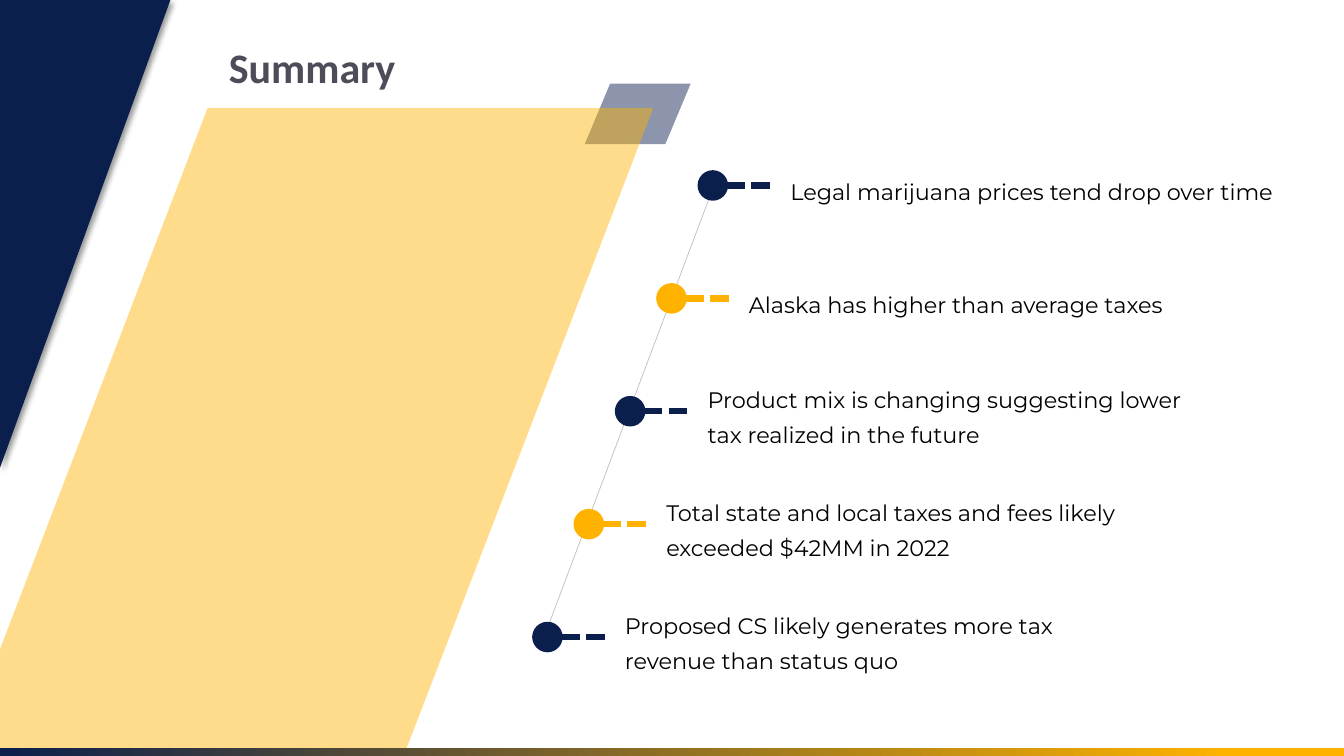
"""Build the Summary slide with five takeaways along a slanted timeline."""
from dataclasses import dataclass

from lxml.etree import SubElement
from pptx import Presentation
from pptx.dml.color import RGBColor
from pptx.enum.dml import MSO_LINE
from pptx.enum.shapes import MSO_CONNECTOR, MSO_SHAPE
from pptx.enum.text import MSO_ANCHOR, MSO_AUTO_SIZE, PP_ALIGN
from pptx.oxml.ns import qn
from pptx.util import Inches, Pt


@dataclass(frozen=True)
class Theme:
    navy: RGBColor = RGBColor(0x0B, 0x1F, 0x4D)
    amber: RGBColor = RGBColor(0xFF, 0xB3, 0x00)
    rail: RGBColor = RGBColor(0xBF, 0xBF, 0xBF)
    heading: RGBColor = RGBColor(0x4D, 0x4D, 0x5A)
    ink: RGBColor = RGBColor(0, 0, 0)
    heading_font: str = "Calibri"
    text_font: str = "Montserrat"
    heading_size: Pt = Pt(30)
    text_size: Pt = Pt(16)
    rail_width: Pt = Pt(0.5)
    marker_width: Pt = Pt(4.5)


def apply(target, settings):
    for name, value in settings.items():
        setattr(target, name, value)


class SlideBuilder:
    def __init__(self, slide, theme):
        self.slide = slide
        self.theme = theme

    def paint(self, shape, color, opacity=100):
        shape.shadow.inherit = False
        shape.fill.solid()
        shape.fill.fore_color.rgb = color
        shape.line.fill.background()
        if opacity < 100:
            tint = shape._element.spPr.find(qn("a:solidFill"))[0]
            SubElement(tint, qn("a:alpha"), val=str(opacity * 1000))

    def preset(self, kind, left, top, width, height, color, opacity=100):
        shape = self.slide.shapes.add_shape(
            kind, Inches(left), Inches(top), Inches(width), Inches(height))
        self.paint(shape, color, opacity)
        return shape

    def polygon(self, points, color, opacity=100):
        corners = [(Inches(x), Inches(y)) for x, y in points]
        builder = self.slide.shapes.build_freeform(*corners[0])
        builder.add_line_segments(corners[1:], close=True)
        shape = builder.convert_to_shape()
        self.paint(shape, color, opacity)
        return shape

    def cast_shadow(self, shape):
        effects = shape._element.spPr.find(qn("a:effectLst"))
        shadow = SubElement(effects, qn("a:outerShdw"), blurRad=str(Pt(4)),
                            dist=str(Pt(3)), dir="2700000", rotWithShape="0")
        black = SubElement(shadow, qn("a:srgbClr"), val="000000")
        SubElement(black, qn("a:alpha"), val="40000")

    def line(self, start, end, color, width, dash=None):
        connector = self.slide.shapes.add_connector(
            MSO_CONNECTOR.STRAIGHT, *(Inches(v) for v in (*start, *end)))
        connector.line.color.rgb = color
        apply(connector.line, {"width": width, "dash_style": dash})
        SubElement(connector._element.spPr, qn("a:effectLst"))

    def set_text(self, shape, text, spacing, font):
        frame = shape.text_frame
        apply(frame, {"text": text, "word_wrap": True,
                      "auto_size": MSO_AUTO_SIZE.NONE,
                      "vertical_anchor": MSO_ANCHOR.MIDDLE})
        paragraph = frame.paragraphs[0]
        apply(paragraph, {"alignment": PP_ALIGN.LEFT, "line_spacing": spacing,
                          "space_before": Pt(0)})
        run = paragraph.runs[0]
        apply(run.font, {k: v for k, v in font.items() if k != "color"})
        run.font.color.rgb = font["color"]

    def title(self, text, left, top, width, height):
        heading = self.slide.shapes.title
        apply(heading, {"left": Inches(left), "top": Inches(top),
                        "width": Inches(width), "height": Inches(height)})
        self.set_text(heading, text, 1.0, {
            "name": self.theme.heading_font, "size": self.theme.heading_size,
            "bold": True, "color": self.theme.heading})

    def marker(self, left, middle, color):
        self.line((left + 0.25, middle), (left + 0.7, middle), color,
                  self.theme.marker_width, MSO_LINE.SQUARE_DOT)
        dot = self.preset(MSO_SHAPE.OVAL, left, middle - 0.12, 0.24, 0.24, color)
        dot.line.color.rgb = color
        dot.line.width = self.theme.marker_width

    def takeaway(self, text, left, middle):
        box = self.slide.shapes.add_textbox(
            Inches(left), Inches(middle - 0.42), Inches(5.11), Inches(0.88))
        self.set_text(box, text, 1.3, {
            "name": self.theme.text_font, "size": self.theme.text_size,
            "color": self.theme.ink})

    def gradient_strip(self, left, top, width, height):
        strip = self.preset(MSO_SHAPE.RECTANGLE, left, top, width, height,
                            self.theme.navy)
        strip.fill.gradient()
        strip.fill.gradient_angle = 0
        colors = ((0, self.theme.navy), (0.92, self.theme.amber))
        for stop, (position, color) in zip(strip.fill.gradient_stops, colors):
            stop.position = position
            stop.color.rgb = color


TAKEAWAYS = (
    "Legal marijuana prices tend drop over time",
    "Alaska has higher than average taxes",
    "Product mix is changing suggesting lower tax realized in the future",
    "Total state and local taxes and fees likely exceeded $42MM in 2022",
    "Proposed CS likely generates more tax revenue than status quo",
)


def main():
    deck = Presentation()
    apply(deck, {"slide_width": Inches(13.33), "slide_height": Inches(7.5)})
    theme = Theme()
    summary = SlideBuilder(deck.slides.add_slide(deck.slide_layouts[5]), theme)

    summary.title("Summary", 2.17, 0.36, 7.32, 0.6)
    summary.line((5.4, 6.31), (7.04, 1.95), theme.rail, theme.rail_width)
    corner = summary.polygon([(0, 0), (1.69, 0), (0, 4.64)], theme.navy)
    summary.cast_shadow(corner)
    accent = summary.preset(MSO_SHAPE.PARALLELOGRAM, 5.8, 0.83, 1.05, 0.6,
                            theme.navy, 47)
    accent.adjustments[0] = 0.418
    summary.polygon([(2.06, 1.07), (6.48, 1.07), (4.03, 7.43), (0, 7.43),
                     (0, 6.44)], theme.amber, 45)

    for index, text in enumerate(TAKEAWAYS):
        left = 6.95 - 0.41 * index
        middle = 1.84 + 1.12 * index
        summary.marker(left, middle, (theme.navy, theme.amber)[index % 2])
        summary.takeaway(text, left + 0.79, middle)

    summary.gradient_strip(0, 7.42, 13.33, 0.08)
    deck.save("out.pptx")


if __name__ == "__main__":
    main()
